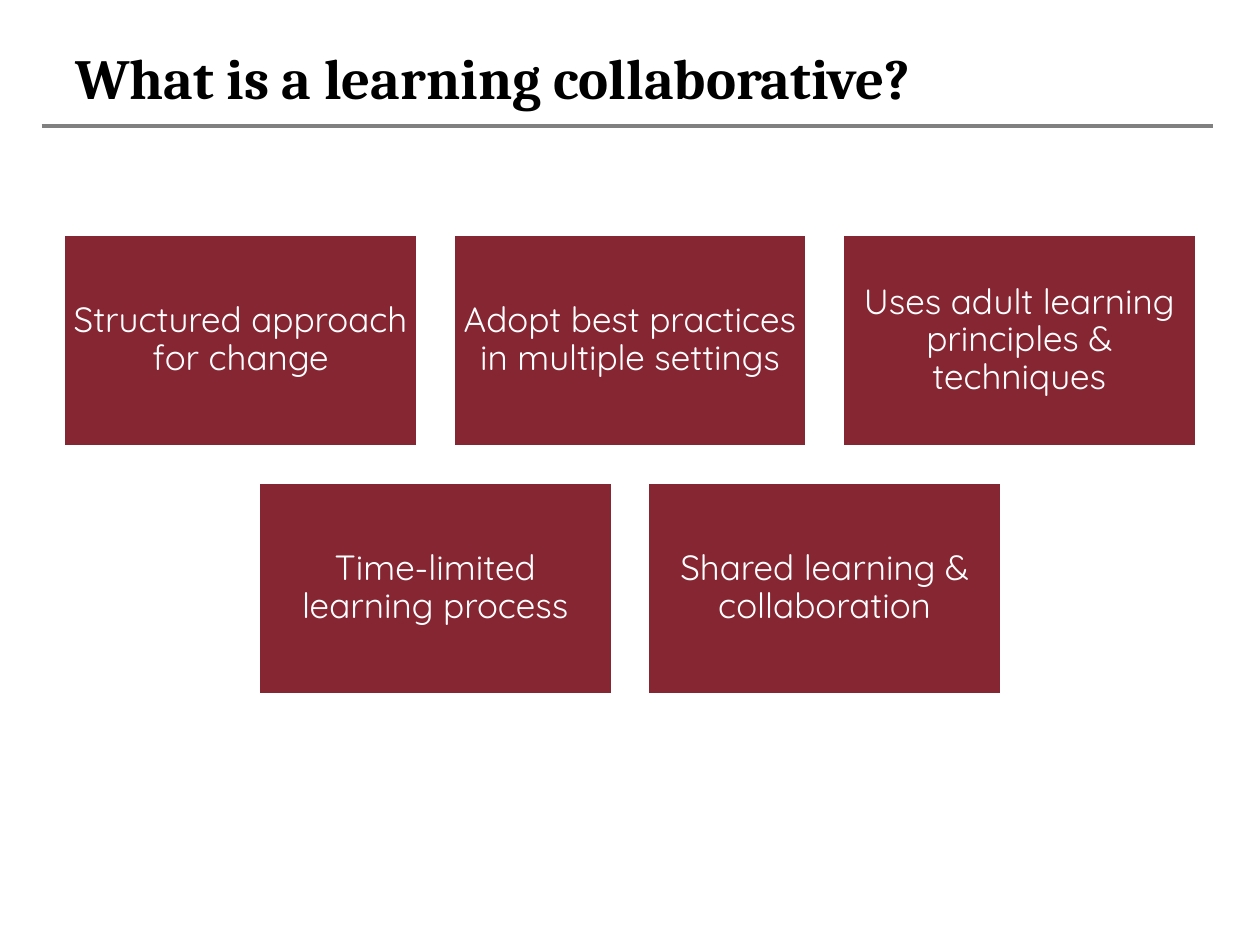
"""Build a slide that defines a learning collaborative in five centred cards."""
from lxml import etree
from pptx import Presentation
from pptx import util as u
from pptx.dml.color import RGBColor
from pptx.enum import shapes, text
from pptx.oxml.ns import qn

TITLE = "What is a learning collaborative?"
CARD_ROWS = [
    [
        "Structured approach for change",
        "Adopt best practices in multiple settings",
        "Uses adult learning principles & techniques",
    ],
    ["Time-limited learning process", "Shared learning & collaboration"],
]
COLORS = {"title": "000000", "rule": "808080", "card": "862633", "white": "FFFFFF"}
PAGE_WIDTH, PAGE_HEIGHT = 25.4, 19.05
CARD_WIDTH, CARD_HEIGHT, GAP = 7.14, 4.29, 0.71
CARDS_TOP = 4.72
INSET = 0.2


def color(name):
    return RGBColor.from_string(COLORS[name])


def add_span(para, words, font_name, size, color_name, bold=False):
    span = para.add_run()
    span.text = words
    span.font.name = font_name
    span.font.size = u.Pt(size)
    span.font.bold = bold
    span.font.color.rgb = color(color_name)


def add_rule(page):
    rule = page.shapes.add_connector(
        shapes.MSO_CONNECTOR.STRAIGHT, u.Cm(0.84), u.Cm(2.54), u.Cm(24.46), u.Cm(2.54)
    )
    rule.line.color.rgb = color("rule")
    rule.line.width = u.Pt(2.25)
    etree.SubElement(rule.element.spPr, qn("a:effectLst"))


def add_title(page):
    title = page.shapes.title
    title.left, title.top = u.Cm(1.27), u.Cm(0.76)
    title.width, title.height = u.Cm(22.86), u.Cm(1.57)
    frame = title.text_frame
    frame.auto_size = text.MSO_AUTO_SIZE.NONE
    frame.vertical_anchor = text.MSO_ANCHOR.MIDDLE
    para = frame.paragraphs[0]
    para.alignment = text.PP_ALIGN.LEFT
    add_span(para, TITLE, "Cambria", 32.4, "title", bold=True)


def add_card(group, words, left, top):
    card = group.shapes.add_shape(
        shapes.MSO_SHAPE.RECTANGLE,
        u.Cm(left), u.Cm(top), u.Cm(CARD_WIDTH), u.Cm(CARD_HEIGHT),
    )
    card.shadow.inherit = False
    card.fill.solid()
    card.fill.fore_color.rgb = color("card")
    card.line.color.rgb = color("white")
    card.line.width = u.Pt(2)
    frame = card.text_frame
    frame.word_wrap = True
    frame.vertical_anchor = text.MSO_ANCHOR.MIDDLE
    frame.margin_left = frame.margin_right = u.Cm(INSET)
    frame.margin_top = frame.margin_bottom = u.Cm(INSET)
    para = frame.paragraphs[0]
    para.alignment = text.PP_ALIGN.CENTER
    para.line_spacing = 0.9
    add_span(para, words, "Quicksand", 20, "white")


def add_cards(page):
    group = page.shapes.add_group_shape()
    for row, cards in enumerate(CARD_ROWS):
        row_width = len(cards) * (CARD_WIDTH + GAP) - GAP
        row_left = (PAGE_WIDTH - row_width) / 2
        top = CARDS_TOP + row * (CARD_HEIGHT + GAP)
        for column, words in enumerate(cards):
            add_card(group, words, row_left + column * (CARD_WIDTH + GAP), top)


def main():
    deck = Presentation()
    deck.slide_width, deck.slide_height = u.Cm(PAGE_WIDTH), u.Cm(PAGE_HEIGHT)
    page = deck.slides.add_slide(deck.slide_layouts.get_by_name("Title Only"))
    add_rule(page)
    add_title(page)
    add_cards(page)
    deck.save("out.pptx")


if __name__ == "__main__":
    main()
